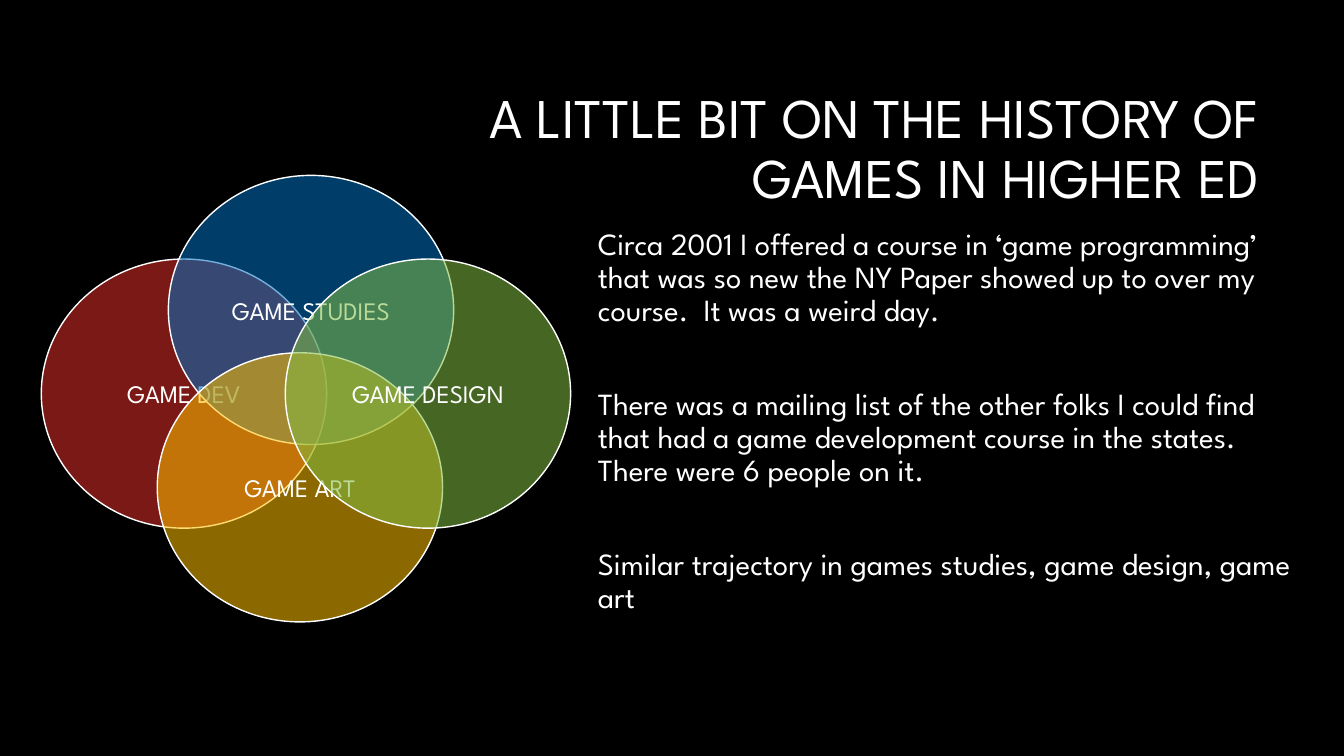
import dataclasses

import lxml.etree
import pptx
import pptx.dml.color
import pptx.enum.shapes
import pptx.enum.text
import pptx.oxml.ns
import pptx.util

Inches = pptx.util.Inches
Align = pptx.enum.text.PP_ALIGN
Anchor = pptx.enum.text.MSO_ANCHOR


@dataclasses.dataclass(frozen=True)
class Theme:
    font: str = "League Spartan"
    background: str = "000000"
    text: str = "FFFFFF"
    red: str = "DF2E28"
    blue: str = "0070C0"
    gold: str = "FFC000"
    green: str = "81BB42"
    opacity: int = 55
    title_size: int = 40
    body_size: int = 22
    label_size: int = 18
    line_spacing: float = 0.9
    body_gap: int = 43


@dataclasses.dataclass(frozen=True)
class Circle:
    label: str
    left: float
    top: float
    color: str


THEME = Theme()
CIRCLE_WIDTH, CIRCLE_HEIGHT = 2.83, 2.67
CIRCLES = [
    Circle("GAME DEV", 0.41, 2.57, THEME.red),
    Circle("GAME STUDIES", 1.67, 1.74, THEME.blue),
    Circle("GAME ART", 1.56, 3.5, THEME.gold),
    Circle("GAME DESIGN", 2.83, 2.57, THEME.green),
]
TITLE = "A LITTLE BIT ON THE HISTORY OF GAMES IN HIGHER ED"
HISTORY = [
    "Circa 2001 I offered a course in ‘game programming’ that was so new "
    "the NY Paper showed up to over my course.  It was a weird day.",
    "There was a mailing list of the other folks I could find that had a game "
    "development course in the states.  There were 6 people on it.",
    "Similar trajectory in games studies, game design, game art",
]


def rgb(color: str) -> pptx.dml.color.RGBColor:
    return pptx.dml.color.RGBColor.from_string(color)


def write_text(shape, lines: list[str], *, size: int, align=Align.LEFT,
               anchor=Anchor.TOP, spacing: float = 1.0, gap: int = 0) -> None:
    frame = shape.text_frame
    frame.word_wrap = True
    frame.auto_size = pptx.enum.text.MSO_AUTO_SIZE.NONE
    frame.vertical_anchor = anchor
    for index, line in enumerate(lines):
        para = frame.paragraphs[0] if index == 0 else frame.add_paragraph()
        para.alignment = align
        para.line_spacing = spacing
        para.space_before = pptx.util.Pt(gap if index else 0)
        properties = para._p.get_or_add_pPr()
        properties.set("marL", "0")
        properties.set("indent", "0")
        lxml.etree.SubElement(properties, pptx.oxml.ns.qn("a:buNone"))
        span = para.add_run()
        span.text = line
        span.font.name = THEME.font
        span.font.size = pptx.util.Pt(size)
        span.font.color.rgb = rgb(THEME.text)


def move(shape, left: float, top: float, width: float, height: float) -> None:
    shape.left, shape.top = Inches(left), Inches(top)
    shape.width, shape.height = Inches(width), Inches(height)


def draw_circle(page, circle: Circle) -> None:
    shape = page.shapes.add_shape(
        pptx.enum.shapes.MSO_SHAPE.OVAL, Inches(circle.left), Inches(circle.top),
        Inches(CIRCLE_WIDTH), Inches(CIRCLE_HEIGHT))
    shape.shadow.inherit = False
    shape.fill.solid()
    shape.fill.fore_color.rgb = rgb(circle.color)
    color = shape._element.spPr.find(
        f"{pptx.oxml.ns.qn('a:solidFill')}/{pptx.oxml.ns.qn('a:srgbClr')}")
    alpha = lxml.etree.SubElement(color, pptx.oxml.ns.qn("a:alpha"))
    alpha.set("val", str(THEME.opacity * 1000))
    shape.line.color.rgb = rgb(THEME.text)
    shape.line.width = pptx.util.Pt(1)
    write_text(shape, [circle.label], size=THEME.label_size,
               align=Align.CENTER, anchor=Anchor.MIDDLE)


def main() -> None:
    deck = pptx.Presentation()
    deck.slide_width, deck.slide_height = Inches(13.33), Inches(7.5)
    page = deck.slides.add_slide(deck.slide_layouts[1])
    page.background.fill.solid()
    page.background.fill.fore_color.rgb = rgb(THEME.background)

    title, body = page.shapes.title, page.placeholders[1]
    move(title, 3.17, 0.84, 9.42, 1.41)
    write_text(title, [TITLE], size=THEME.title_size, align=Align.RIGHT,
               spacing=THEME.line_spacing)
    move(body, 5.83, 2.22, 7.17, 4.36)
    write_text(body, HISTORY, size=THEME.body_size,
               spacing=THEME.line_spacing, gap=THEME.body_gap)
    for circle in CIRCLES:
        draw_circle(page, circle)
    deck.save("out.pptx")


if __name__ == "__main__":
    main()
